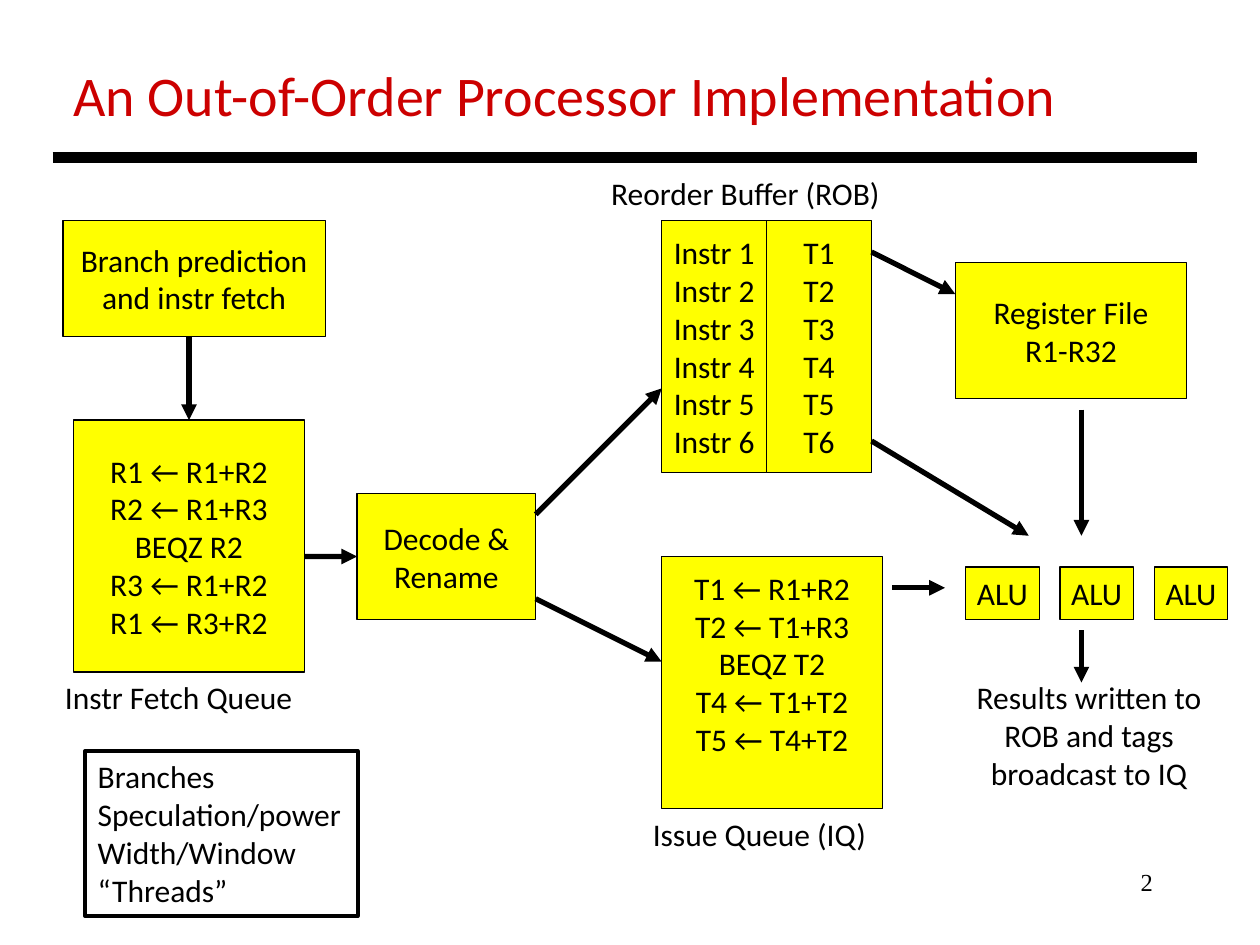
from lxml import etree
from pptx import Presentation
from pptx.dml.color import RGBColor
from pptx.enum.shapes import MSO_CONNECTOR, MSO_SHAPE
from pptx.enum.text import MSO_ANCHOR, MSO_AUTO_SIZE, PP_ALIGN
from pptx.oxml.ns import qn
from pptx.util import Cm, Pt

LEFT, CENTER, RIGHT = PP_ALIGN.LEFT, PP_ALIGN.CENTER, PP_ALIGN.RIGHT
TOP, MIDDLE = MSO_ANCHOR.TOP, MSO_ANCHOR.MIDDLE
FIT_SHAPE = MSO_AUTO_SIZE.SHAPE_TO_FIT_TEXT
RECTANGLE = MSO_SHAPE.RECTANGLE
STRAIGHT = MSO_CONNECTOR.STRAIGHT
TOP_SIDE, LEFT_SIDE = 0, 1
BLACK, RED, YELLOW = "000000", "CC0000", "FFFF00"
BODY = {"name": "Calibri", "size": Pt(18)}


def color(hex_string):
    return RGBColor.from_string(hex_string)


def write(shape, lines, align, font=BODY, text_color=BLACK):
    """Put one paragraph per line into the shape, without wrapping."""
    frame = shape.text_frame
    frame.word_wrap = False
    for index, line in enumerate(lines):
        para = frame.paragraphs[0] if index == 0 else frame.add_paragraph()
        para.alignment = align
        span = para.add_run()
        span.text = line
        for attribute, value in font.items():
            setattr(span.font, attribute, value)
        span.font.color.rgb = color(text_color)


deck = Presentation()
deck.slide_width, deck.slide_height = Cm(25.4), Cm(19.05)
page = deck.slides.add_slide(deck.slide_layouts[6])

# Title and page number
title = page.shapes.add_textbox(Cm(1.23), Cm(1.09), Cm(20.6), Cm(1.63))
write(title, ["An Out-of-Order Processor Implementation"], LEFT,
      {"name": "Calibri", "size": Pt(32)}, RED)
number = page.shapes.add_textbox(Cm(18.21), Cm(17.35), Cm(5.28), Cm(1.27))
write(number, ["2"], RIGHT, {"name": "Times New Roman", "size": Pt(14)})
number.text_frame.word_wrap = True

# Rectangles: left, top, width, height, lines
units = {
    "fetch": (1.27, 4.45, 5.29, 2.33, ["Branch prediction", "and instr fetch"]),
    "fetch queue": (1.48, 8.47, 4.66, 5.08,
                    ["R1 ← R1+R2", "R2 ← R1+R3", "BEQZ R2",
                     "R3 ← R1+R2", "R1 ← R3+R2"]),
    "decode": (7.2, 9.95, 3.6, 2.54, ["Decode &", "Rename"]),
    "rob instructions": (13.34, 4.45, 2.12, 5.08,
                         [f"Instr {i}" for i in range(1, 7)]),
    "rob tags": (15.45, 4.45, 2.12, 5.08, [f"T{i}" for i in range(1, 7)]),
    "issue queue": (13.34, 11.22, 4.45, 5.08,
                    ["T1 ← R1+R2", "T2 ← T1+R3", "BEQZ T2",
                     "T4 ← T1+T2", "T5 ← T4+T2"]),
    "register file": (19.26, 5.29, 4.66, 2.75, ["Register File", "R1-R32"]),
    "topics": (1.72, 15.14, 5.49, 3.33,
               ["Branches", "Speculation/power", "Width/Window", "“Threads”"]),
}
for i in range(3):
    units[f"alu {i + 1}"] = (19.47 + 1.9 * i, 11.43, 1.48, 1.06, ["ALU"])

boxes = {}
for unit, (*place, lines) in units.items():
    box = page.shapes.add_shape(RECTANGLE, *map(Cm, place))
    box.shadow.inherit = False
    box.line.color.rgb = color(BLACK)
    if unit == "topics":
        box.fill.background()
        box.line.width = Pt(2.25)
        box.text_frame.vertical_anchor = TOP
        write(box, lines, LEFT)
    else:
        box.fill.solid()
        box.fill.fore_color.rgb = color(YELLOW)
        box.line.width = Pt(0.75)
        box.text_frame.vertical_anchor = MIDDLE
        write(box, lines, CENTER)
    boxes[unit] = box
# The issue queue keeps room for one more instruction
boxes["issue queue"].text_frame.margin_bottom = Cm(0.9)

# Labels: left, top, width, height, alignment, lines
labels = [
    (1.06, 13.55, 5.16, 1.02, LEFT, ["Instr Fetch Queue"]),
    (12.07, 3.39, 5.99, 1.02, LEFT, ["Reorder Buffer (ROB)"]),
    (12.91, 16.3, 4.88, 1.02, LEFT, ["Issue Queue (IQ)"]),
    (19.4, 13.55, 5.11, 2.57, CENTER,
     ["Results written to", "ROB and tags", "broadcast to IQ"]),
]
for *place, align, lines in labels:
    label = page.shapes.add_textbox(*map(Cm, place))
    label.text_frame.auto_size = FIT_SHAPE
    write(label, lines, align)

# Lines: start x, start y, end x, end y, width, joined end
connections = [
    (1.06, 3.18, 24.13, 3.18, 6, None),  # title rule
    (3.81, 6.77, 3.81, 8.47, 3, ("fetch queue", TOP_SIDE)),
    (6.15, 11.22, 7.2, 11.22, 3, ("decode", LEFT_SIDE)),
    (10.8, 10.37, 13.34, 7.83, 3, None),
    (10.8, 12.07, 13.34, 13.34, 3, None),
    (17.99, 11.85, 19.05, 11.85, 3, None),
    (21.8, 8.26, 21.8, 10.8, 3, None),
    (17.57, 8.89, 20.74, 10.8, 3, None),
    (21.8, 12.7, 21.8, 13.76, 3, None),
    (17.57, 5.08, 19.26, 5.93, 3, None),
]
for *ends, width, joined in connections:
    connector = page.shapes.add_connector(STRAIGHT, *map(Cm, ends))
    connector.line.color.rgb = color(BLACK)
    connector.line.width = Pt(width)
    if joined:
        target, side = joined
        connector.end_connect(boxes[target], side)
    if width == 3:
        outline = connector.line._get_or_add_ln()
        etree.SubElement(outline, qn("a:tailEnd"), type="triangle")
    etree.SubElement(connector._element.spPr, qn("a:effectLst"))

deck.save("out.pptx")
